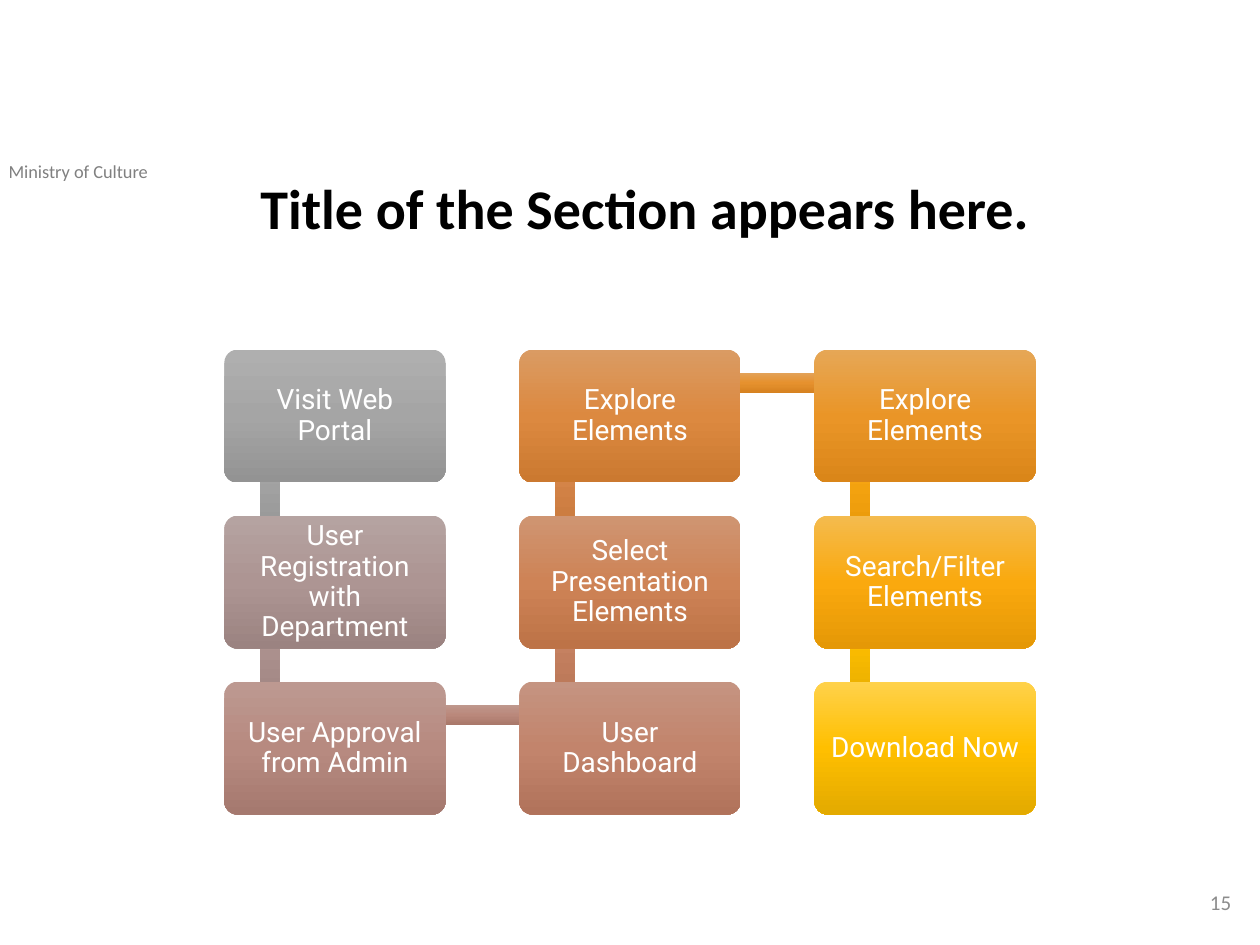
from lxml import etree
from pptx import Presentation
from pptx.dml.color import RGBColor
from pptx.enum.shapes import MSO_SHAPE
from pptx.enum.text import MSO_ANCHOR, MSO_AUTO_SIZE, PP_ALIGN
from pptx.oxml.ns import qn
from pptx.util import Inches, Pt

ROUNDED, BAR = MSO_SHAPE.ROUNDED_RECTANGLE, MSO_SHAPE.RECTANGLE
TOP, MIDDLE = MSO_ANCHOR.TOP, MSO_ANCHOR.MIDDLE
LEFT, CENTER, RIGHT = PP_ALIGN.LEFT, PP_ALIGN.CENTER, PP_ALIGN.RIGHT
WIDTH, HEIGHT = 10, 7.5
TOP_LAYOUT = 5  # title only

COLORS = {"ministry": "808080", "number": "8C8C8C", "title": "000000", "step": "FFFFFF"}
# Light, middle and dark tones before the hue turns towards gold
STEP_TONES = {
    "Visit Web Portal": "AFAFAF A5A5A5 939393",
    "User Registration with Department": "B5A1A1 AD9393 9B8181",
    "User Approval from Admin": "BD9191 B78080 A56F6F",
    "User Dashboard": "C58181 C26C6C B15B5B",
    "Select Presentation Elements": "CF7272 CE5656 BD4747",
    "Explore Elements": "DA6363 DC4040 CB3030",
    "Explore Elements ": "E65656 EA2727 DA1919",
    "Search/Filter Elements": "F44E4E FA0E0E E50606",
    "Download Now": "FF4B4B FF0000 E30000",
}
LINK_TONES = [
    "AFAFAF A5A5A5 939393", "B69E9E AF9191 9D7F7F", "BF8D8D BA7B7B A96A6A",
    "C97B7B C76363 B65353", "D56969 D64A4A C53A3A", "E35A5A E62E2E D62020",
    "F24F4F F81212 E50707", "FF4B4B FF0000 E30000",
]
ROWS = 3
GOLD = 0.75  # green share of the red-to-blue span at the last step


def warm(tone, progress):
    """Turn a red tone towards gold; progress runs from 0 to 1."""
    high, low = int(tone[:2], 16), int(tone[4:], 16)
    green = round(low + (high - low) * GOLD * progress)
    return f"{high:02X}{green:02X}{low:02X}"


def fill_gradient(shape, tones, progress):
    """Fill from light at the top to dark at the bottom, whatever the rotation."""
    shape.shadow.inherit = False
    shape.line.fill.background()
    shape.fill.gradient()
    gradient = shape._element.spPr.find(qn("a:gradFill"))
    gradient.set("rotWithShape", "0")
    for child in list(gradient):
        gradient.remove(child)
    stops = etree.SubElement(gradient, qn("a:gsLst"))
    for position, tone in zip((0, 50000, 100000), tones.split()):
        stop = etree.SubElement(stops, qn("a:gs"), pos=str(position))
        etree.SubElement(stop, qn("a:srgbClr"), val=warm(tone, progress))
    etree.SubElement(gradient, qn("a:lin"), ang="5400000", scaled="0")


def write(frame, text, font, color, align, anchor, spacing=1.0):
    frame.word_wrap = True
    frame.auto_size = MSO_AUTO_SIZE.NONE
    frame.vertical_anchor = anchor
    paragraph = frame.paragraphs[0]
    paragraph.text = text
    paragraph.alignment = align
    paragraph.line_spacing = spacing
    for key, value in font.items():
        setattr(paragraph.font, key, value)
    paragraph.font.color.rgb = RGBColor.from_string(COLORS[color])


def add_title(slide, box):
    title = slide.shapes.title
    title.left, title.top, title.width, title.height = map(Inches, box)
    write(title.text_frame, "Title of the Section appears here.",
          {"name": "Calibri", "size": Pt(32), "bold": True}, "title", CENTER, TOP, 0.9)


def add_label(slide, box, text, size, color, align, anchor):
    label = slide.shapes.add_textbox(*map(Inches, box))
    write(label.text_frame, text, {"name": "Calibri", "size": Pt(size)}, color, align, anchor)


def add_link(slide, start, end, tones, progress):
    """Bar joining two points, turned when the steps share a column."""
    (x1, y1), (x2, y2) = start, end
    length, thick = abs(x2 - x1) + abs(y2 - y1), 0.16
    left, top = (x1 + x2 - length) / 2, (y1 + y2 - thick) / 2
    link = slide.shapes.add_shape(BAR, *map(Inches, (left, top, length, thick)))
    if y1 != y2:
        link.rotation = 90 if y2 > y1 else 270
    fill_gradient(link, tones, progress)


def add_step(slide, box, text, tones, progress):
    step = slide.shapes.add_shape(ROUNDED, *map(Inches, box))
    step.adjustments[0] = 0.1
    fill_gradient(step, tones, progress)
    frame = step.text_frame
    for side in ("left", "top", "right", "bottom"):
        setattr(frame, f"margin_{side}", Inches(0.07))
    write(frame, text, {"name": "Roboto", "size": Pt(16)}, "step", CENTER, MIDDLE, 0.9)


def add_process(slide, box):
    """Steps running down, up and down again through three columns."""
    left, top, width, height = box
    step_w, step_h = width * 3 / 11, height * 2 / 7
    pitch_x, pitch_y = step_w * 4 / 3, step_h * 5 / 4
    corners = []
    for index in range(len(STEP_TONES)):
        column, row = divmod(index, ROWS)
        if column % 2:
            row = ROWS - 1 - row
        corners.append((left + column * pitch_x, top + row * pitch_y))
    anchors = [(x + step_w * 0.205, y + step_h * 0.25) for x, y in corners]
    last = len(corners) - 1
    for index, (text, tones) in enumerate(STEP_TONES.items()):
        if index < last:
            add_link(slide, anchors[index], anchors[index + 1],
                     LINK_TONES[index], index / (last - 1))
        add_step(slide, (*corners[index], step_w, step_h), text.strip(), tones, index / last)


def main():
    deck = Presentation()
    deck.slide_width, deck.slide_height = Inches(WIDTH), Inches(HEIGHT)
    slide = deck.slides.add_slide(deck.slide_layouts[TOP_LAYOUT])
    add_label(slide, (-0.03, 1.22, 2.18, 0.28), "Ministry of Culture", 10.5,
              "ministry", LEFT, TOP)
    add_process(slide, (WIDTH * 0.178, HEIGHT * 0.37, WIDTH * 0.644, HEIGHT * 0.492))
    add_label(slide, (7.62, 6.96, 2.25, 0.4), "15", 12, "number", RIGHT, MIDDLE)
    add_title(slide, (1.93, 1.39, 6.38, 0.79))
    deck.save("out.pptx")


if __name__ == "__main__":
    main()
